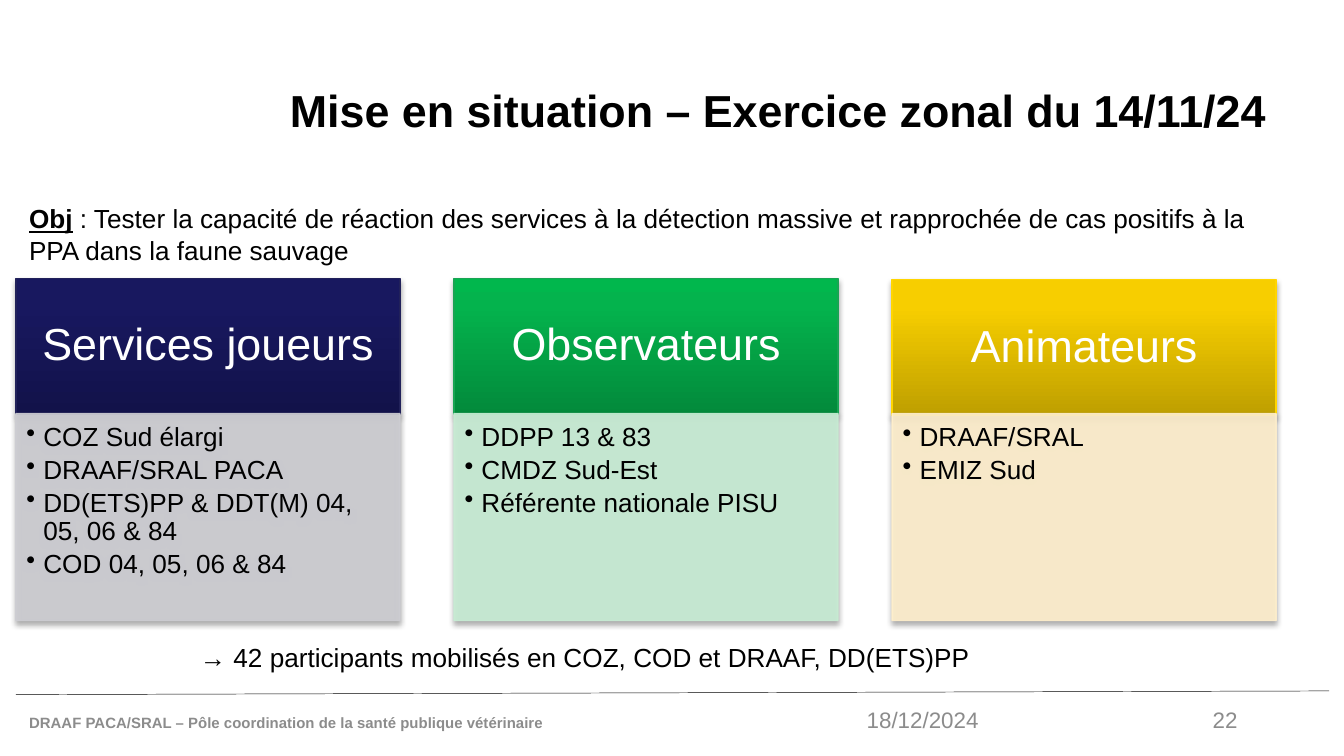
import copy
import pptx
import pptx.util
import pptx.dml.color
import pptx.enum.shapes
import pptx.enum.text
import pptx.oxml
import pptx.oxml.ns

Cm, Pt = pptx.util.Cm, pptx.util.Pt
ALIGN, ANCHOR = pptx.enum.text.PP_ALIGN, pptx.enum.text.MSO_ANCHOR

TITLE = "Mise en situation – Exercice zonal du 14/11/24"
GOAL = ("Obj", " : Tester la capacité de réaction des services à la détection "
        "massive et rapprochée de cas positifs à la PPA dans la faune sauvage")
TOTAL = "→ 42 participants mobilisés en COZ, COD et DRAAF, DD(ETS)PP"
OWNER = "DRAAF PACA/SRAL – Pôle coordination de la santé publique vétérinaire"
DATE, PAGE = "18/12/2024", "22"

GROUPS = [
    dict(name="Services joueurs", top=5.26, grad=("12124A", "18185F", "161661"),
         edge="21215A", pale="CDCDD2",
         items=["COZ Sud élargi", "DRAAF/SRAL PACA",
                "DD(ETS)PP & DDT(M) 04, 05, 06 & 84", "COD 04, 05, 06 & 84"]),
    dict(name="Observateurs", top=5.26, grad=("038A3B", "04B34D", "01B74D"),
         edge="19A453", pale="C7EDD4",
         items=["DDPP 13 & 83", "CMDZ Sud-Est", "Référente nationale PISU"]),
    dict(name="Animateurs", top=5.29, grad=("BE9F00", "F7CE00", "F8CF00"),
         edge="FFD500", pale="FFEFCC",
         items=["DRAAF/SRAL", "EMIZ Sud"]),
]

THEME = dict(font="Arial", ink="000000", light="FFFFFF", grey="8C8C8C",
             big=24, body=14, small=12, tiny=8)
STOPS = (0, 0.8, 1)
LEFT, STEP, WIDTH = 0.3, 8.28, 7.26
HEAD_H, BODY_TOP, BODY_H = 2.57, 7.82, 3.91


def rgb(code):
    return pptx.dml.color.RGBColor.from_string(code)


def node(tag, attrs="", inner=""):
    return pptx.oxml.parse_xml(
        f'<a:{tag} {pptx.oxml.ns.nsdecls("a")} {attrs}>{inner}</a:{tag}>')


def write(shape, text, size=THEME["body"], color=THEME["ink"], bold=False,
          lead="", align=ALIGN.LEFT, anchor=ANCHOR.TOP, pad=None,
          line=None, after=None, bullet=False):
    """Fill a shape with one paragraph per text; lead is a bold underlined start."""
    frame = shape.text_frame
    frame.word_wrap = True
    frame.vertical_anchor = anchor
    if pad:
        (frame.margin_left, frame.margin_top,
         frame.margin_right, frame.margin_bottom) = [Cm(x) for x in pad]
    for i, part in enumerate([text] if isinstance(text, str) else text):
        para = frame.add_paragraph() if i else frame.paragraphs[0]
        if bullet:
            props = para._p.get_or_add_pPr()
            props.set("marL", str(Cm(0.32)))
            props.set("indent", str(-Cm(0.32)))
            props.append(node("buChar", 'char="•"'))
        para.alignment = align
        if line:
            para.line_spacing = line
        if after:
            para.space_after = Pt(after)
        for words, marked in ((lead, True), (part, False)):
            if words:
                run = para.add_run()
                run.text = words
                run.font.name = THEME["font"]
                run.font.size = Pt(size)
                run.font.color.rgb = rgb(color)
                run.font.bold = bold or marked
                run.font.underline = marked


def label(slide, box, text, **form):
    write(slide.shapes.add_textbox(*[Cm(x) for x in box]), text, **form)


def panel(slide, box, edge):
    """Add a rectangle with a thin edge and a soft shadow below."""
    rect = slide.shapes.add_shape(pptx.enum.shapes.MSO_SHAPE.RECTANGLE,
                                  *[Cm(x) for x in box])
    rect.line.color.rgb = rgb(edge)
    rect.line.width = Pt(0.75)
    rect.shadow.inherit = False
    rect._element.spPr.find(pptx.oxml.ns.qn("a:effectLst")).append(node(
        "outerShdw",
        f'blurRad="{Pt(3.1)}" dist="{Pt(1.8)}" dir="5400000" rotWithShape="0"',
        '<a:srgbClr val="000000"><a:alpha val="35000"/></a:srgbClr>'))
    return rect


def shade(rect, codes):
    """Blend three colours from the bottom up."""
    rect.fill.gradient()
    rect.fill.gradient_angle = 90
    first = rect._element.spPr.find(".//" + pptx.oxml.ns.qn("a:gs"))
    first.addnext(copy.deepcopy(first))
    for stop, code, place in zip(rect.fill.gradient_stops, codes, STOPS):
        stop.color.rgb = rgb(code)
        stop.position = place


def column(slide, left, group):
    head = panel(slide, (left, group["top"], WIDTH, HEAD_H), group["edge"])
    shade(head, group["grad"])
    write(head, group["name"], size=THEME["big"], color=THEME["light"],
          align=ALIGN.CENTER, anchor=ANCHOR.MIDDLE, line=0.9,
          pad=(0.48, 0.28, 0.48, 0.28))
    body = panel(slide, (left, BODY_TOP, WIDTH, BODY_H), group["pale"])
    body.fill.solid()
    body.fill.fore_color.rgb = rgb(group["pale"])
    for tint in body._element.spPr.findall(
            ".//" + pptx.oxml.ns.qn("a:solidFill") + "/*"):
        tint.append(node("alpha", 'val="90000"'))
    write(body, group["items"], bullet=True, line=0.9, after=2.4,
          pad=(0.2, 0.2, 0.28, 0.3))


def rule(slide):
    line = slide.shapes.add_connector(
        pptx.enum.shapes.MSO_CONNECTOR.STRAIGHT,
        Cm(LEFT), Cm(13.13), Cm(25.12), Cm(13.06))
    line.line.color.rgb = rgb(THEME["ink"])
    line.line.width = Pt(0.25)
    line._element.spPr.append(node("effectLst"))


def main():
    deck = pptx.Presentation()
    deck.slide_width, deck.slide_height = Cm(25.4), Cm(14.29)
    slide = deck.slides.add_slide(deck.slide_layouts[6])

    rule(slide)
    foot = dict(color=THEME["grey"], anchor=ANCHOR.MIDDLE)
    label(slide, (LEFT, 13.28, 10.49, 0.76), OWNER,
          size=THEME["tiny"], bold=True, **foot)
    label(slide, (22.07, 13.23, 1.57, 0.76), PAGE,
          size=THEME["small"], align=ALIGN.RIGHT, **foot)
    label(slide, (16.13, 13.23, 2.77, 0.76), DATE, size=THEME["small"], **foot)
    label(slide, (5.23, 0.76, 19.33, 2.77), TITLE, size=THEME["big"],
          bold=True, anchor=ANCHOR.MIDDLE, line=0.9)
    label(slide, (LEFT, 3.71, 24.54, 1.45), GOAL[1], lead=GOAL[0])
    for i, group in enumerate(GROUPS):
        column(slide, LEFT + i * STEP, group)
    label(slide, (3.53, 11.99, 20.14, 0.86), TOTAL)
    deck.save("out.pptx")


if __name__ == "__main__":
    main()
